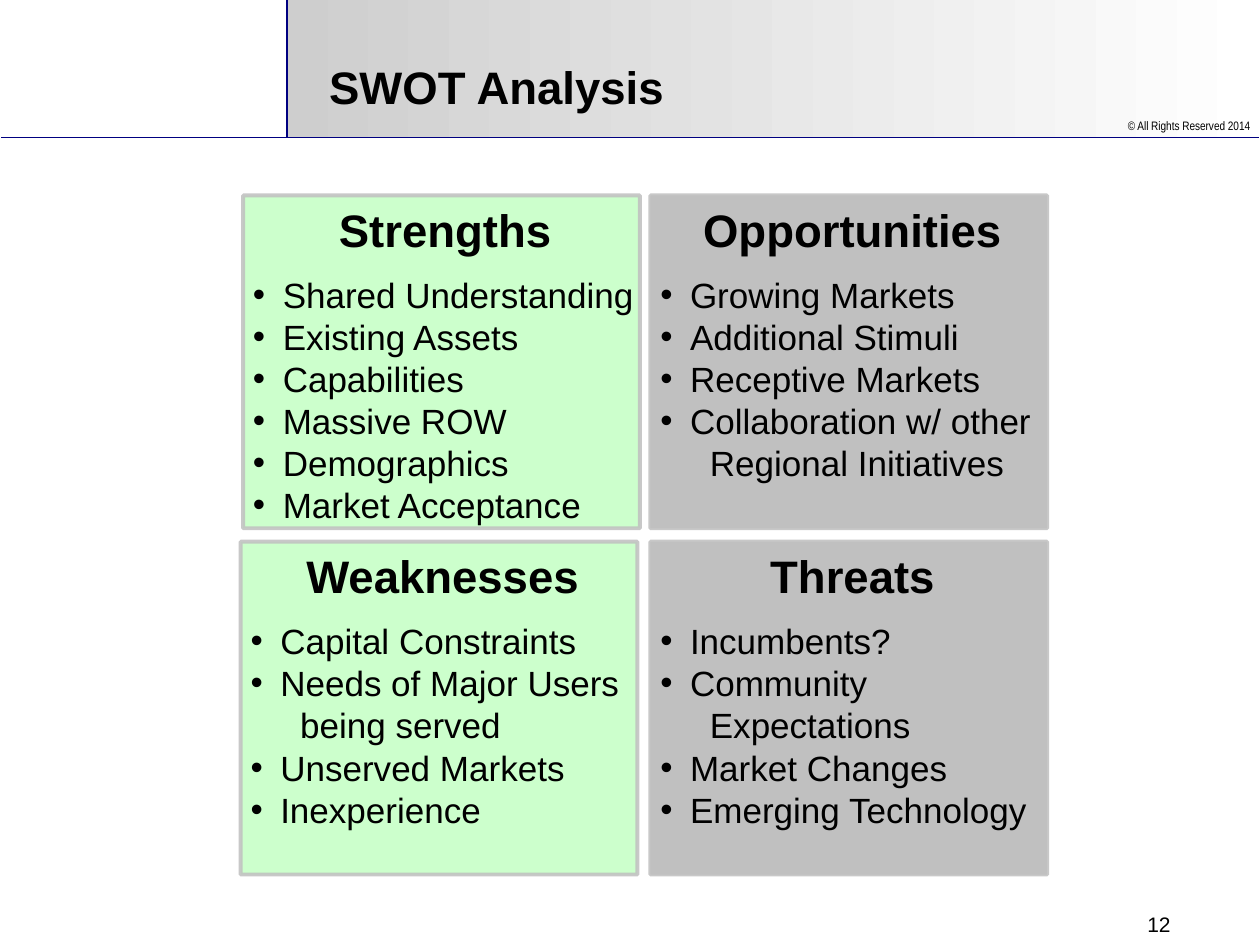
from dataclasses import dataclass

from lxml.etree import SubElement
from pptx import Presentation
from pptx.dml.color import RGBColor
from pptx.enum.shapes import MSO_CONNECTOR, MSO_SHAPE
from pptx.enum.text import MSO_ANCHOR, MSO_AUTO_SIZE, PP_ALIGN
from pptx.oxml.ns import qn
from pptx.util import Cm, Pt


@dataclass(frozen=True)
class Theme:
    ink: RGBColor = RGBColor(0, 0, 0)
    navy: RGBColor = RGBColor(0, 0, 0x80)
    green: RGBColor = RGBColor(0xCC, 0xFF, 0xCC)
    gray: RGBColor = RGBColor(0xC0, 0xC0, 0xC0)
    shade: RGBColor = RGBColor(0xCE, 0xCE, 0xCE)
    white: RGBColor = RGBColor(0xFF, 0xFF, 0xFF)
    face: str = "Arial"
    thin: str = "Arial Narrow"
    head: int = 26
    body: int = 20
    page: int = 12
    note: int = 7


THEME = Theme()
WIDE, HIGH = 8, 6.71  # size of one quadrant
TOP, LOW = 3.94, 10.92
RIGHT = 13.11
BAND_X, BAND_H = 5.79, 2.77

# Left, top, fill, heading, items; an item's second line follows a line break
QUADS = [
    (4.9, TOP, THEME.green, "Strengths",
     ["Shared Understanding", "Existing Assets", "Capabilities",
      "Massive ROW", "Demographics", "Market Acceptance"]),
    (RIGHT, TOP, THEME.gray, "Opportunities",
     ["Growing Markets", "Additional Stimuli", "Receptive Markets",
      "Collaboration w/ other\nRegional Initiatives"]),
    (4.85, LOW, THEME.green, "Weaknesses",
     ["Capital Constraints", "Needs of Major Users\nbeing served",
      "Unserved Markets", "Inexperience"]),
    (RIGHT, LOW, THEME.gray, "Threats",
     ["Incumbents?", "Community\nExpectations", "Market Changes",
      "Emerging Technology"]),
]


def place(shape, x, y, w, h):
    shape.left, shape.top, shape.width, shape.height = map(Cm, (x, y, w, h))


def style(para, size, bold=False, face=THEME.face, align=PP_ALIGN.LEFT):
    para.alignment = align
    font = para.font
    font.name, font.size, font.bold = face, Pt(size), bold
    font.color.rgb = THEME.ink


def indent(para, left, hang=0, mark=None):
    """Set the indent and the bullet; no mark means no bullet."""
    props = para._p.get_or_add_pPr()
    props.set("marL", str(Cm(left)))
    props.set("indent", str(-Cm(hang)))
    if mark:
        SubElement(props, qn("a:buFont")).set("typeface", THEME.face)
        SubElement(props, qn("a:buChar")).set("char", mark)
    else:
        SubElement(props, qn("a:buNone"))


def add_rule(slide, x1, y1, x2, y2):
    rule = slide.shapes.add_connector(
        MSO_CONNECTOR.STRAIGHT, Cm(x1), Cm(y1), Cm(x2), Cm(y2))
    rule.line.color.rgb = THEME.navy
    rule.line.width = Pt(1)
    SubElement(rule.element.spPr, qn("a:effectLst"))


def add_band(slide):
    band = slide.shapes.add_shape(
        MSO_SHAPE.RECTANGLE, Cm(BAND_X), 0, Cm(19.56), Cm(BAND_H))
    band.shadow.inherit = False
    band.line.fill.background()
    band.fill.gradient()
    band.fill.gradient_angle = 0
    for stop, color in zip(band.fill.gradient_stops, (THEME.shade, THEME.white)):
        stop.color.rgb = color
    # Send the band behind the title
    band.element.getparent().insert(2, band.element)


def add_label(slide, text, box, size, face=THEME.face):
    label = slide.shapes.add_textbox(*map(Cm, box))
    label.text_frame.word_wrap = True
    para = label.text_frame.paragraphs[0]
    para.text = text
    style(para, size, face=face, align=PP_ALIGN.RIGHT)


def set_title(title, text):
    place(title, 6.38, 1.02, 14.2, 1.45)
    frame = title.text_frame
    frame.auto_size = MSO_AUTO_SIZE.NONE
    frame.vertical_anchor = MSO_ANCHOR.MIDDLE
    frame.text = text
    style(frame.paragraphs[0], THEME.head, bold=True)


def fill_quad(holder, x, y, color, head, items):
    place(holder, x, y, WIDE, HIGH)
    holder.fill.solid()
    holder.fill.fore_color.rgb = color
    holder.line.width = Pt(2.25)
    holder.line.color.rgb = THEME.gray
    tint = holder.element.spPr.find(".//" + qn("a:ln")).find(".//" + qn("a:srgbClr"))
    SubElement(tint, qn("a:alpha")).set("val", "85000")

    frame = holder.text_frame
    frame.word_wrap = True
    frame.auto_size = MSO_AUTO_SIZE.NONE
    frame.vertical_anchor = MSO_ANCHOR.TOP
    frame.margin_left, frame.margin_right = Cm(0.2), Cm(0.05)
    frame.margin_top = frame.margin_bottom = Cm(0.13)

    # Heading
    para = frame.paragraphs[0]
    para.text = head
    para.line_spacing, para.space_before = Pt(31), Pt(0)
    indent(para, 0)
    style(para, THEME.head, bold=True, align=PP_ALIGN.CENTER)

    # List, with the second line of an item set further in
    for rank, item in enumerate(items):
        for row, text in enumerate(item.split("\n")):
            para = frame.add_paragraph()
            para.text = text
            para.line_spacing = Pt(24)
            para.space_before = Pt(10 if rank == row == 0 else 0)
            if row:
                indent(para, 1)
            else:
                indent(para, 0.6, 0.6, "•")
            style(para, THEME.body)


def main():
    deck = Presentation()
    deck.slide_width, deck.slide_height = Cm(25.4), Cm(19.05)
    # The comparison layout has a title and four body placeholders
    slide = deck.slides.add_slide(deck.slide_layouts[4])
    title, *holders = slide.placeholders

    # Header
    add_band(slide)
    add_rule(slide, 0.03, BAND_H, 25.37, BAND_H)
    add_rule(slide, BAND_X, 0, BAND_X, BAND_H)
    set_title(title, "SWOT Analysis")
    add_label(slide, "© All Rights Reserved 2014", (21.74, 2.26, 3.71, 0.84),
              THEME.note, THEME.thin)

    # Quadrants
    for holder, quad in zip(holders, QUADS):
        fill_quad(holder, *quad)

    # Page number
    add_label(slide, "12", (19.71, 18.26, 4.14, 0.61), THEME.page)
    deck.save("out.pptx")


if __name__ == "__main__":
    main()
